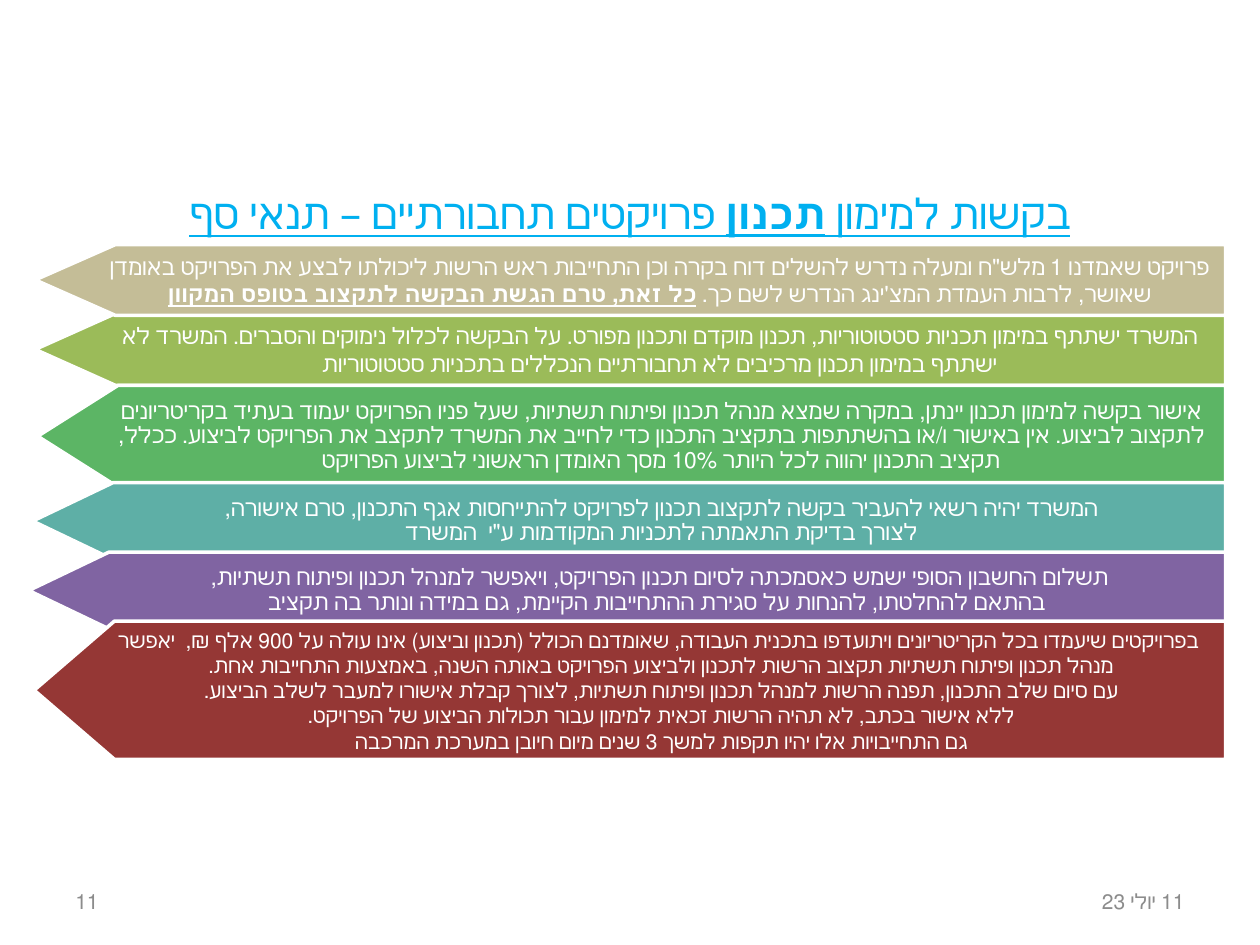
import pptx
import pptx.util
import pptx.dml.color
import pptx.enum.text

Cm = pptx.util.Cm
Pt = pptx.util.Pt
ALIGN = pptx.enum.text.PP_ALIGN
MIDDLE = pptx.enum.text.MSO_ANCHOR.MIDDLE
COLORS = {
    "title": "00B0F0", "footer": "8C8C8C", "white": "FFFFFF",
    "sand": "C4BD97", "olive": "9BBB59", "green": "5CB565",
    "teal": "5EAFA6", "purple": "8064A2", "red": "953735",
}


def color(key):
    return pptx.dml.color.RGBColor.from_string(COLORS[key])


def add_text(paragraph, runs, font, size, color_key, align, underline=None):
    paragraph.alignment = align
    paragraph._p.get_or_add_pPr().set("rtl", "1")
    for text, emphasis in runs:
        for index, line in enumerate(text.split("\n")):
            if index:
                paragraph.add_line_break()
            run = paragraph.add_run()
            run.text = line
            run.font.name = font
            run.font.size = Pt(size)
            run.font.bold = emphasis
            run.font.underline = underline or emphasis
            run.font.color.rgb = color(color_key)
            run._r.get_or_add_rPr().set("lang", "he-IL")


deck = pptx.Presentation()
deck.slide_width = Cm(25.4)
deck.slide_height = Cm(19.05)
slide = deck.slides.add_slide(deck.slide_layouts[5])

title = slide.shapes.title
title.left, title.top, title.width, title.height = Cm(1.27), Cm(3.48), Cm(22.86), Cm(1.6)
title.text_frame.vertical_anchor = MIDDLE
title_runs = [("בקשות למימון ", False), ("תכנון", True), (" פרויקטים תחבורתיים – תנאי סף", False)]
add_text(title.text_frame.paragraphs[0], title_runs, "Montserrat", 24, "title", ALIGN.CENTER, True)

for left, text, align in [(18.21, "11 יולי 23", ALIGN.RIGHT), (1.27, "11", ALIGN.LEFT)]:
    footer = slide.shapes.add_textbox(Cm(left), Cm(17.65), Cm(5.92), Cm(1.02)).text_frame
    footer.word_wrap = True
    footer.vertical_anchor = MIDDLE
    add_text(footer.paragraphs[0], [(text, False)], "Calibri", 12, "footer", align)

conditions = [
    ("olive", 0.71, 6.32, 1.45, 13, None, [[
        ("המשרד ישתתף במימון תכניות סטטוטוריות, תכנון מוקדם ותכנון מפורט. על הבקשה לכלול נימוקים והסברים. "
         "המשרד לא ישתתף במימון תכנון מרכיבים לא תחבורתיים הנכללים בתכניות סטטוטוריות", False)]]),
    ("green", 0.76, 7.77, 2.05, 13, 0.9, [[
        ("אישור בקשה למימון תכנון יינתן, במקרה שמצא מנהל תכנון ופיתוח תשתיות, שעל פניו הפרויקט יעמוד בעתיד "
         "בקריטריונים לתקצוב לביצוע. אין באישור ו/או בהשתתפות בתקציב התכנון כדי לחייב את המשרד לתקצב את "
         "הפרויקט לביצוע. ככלל, תקציב התכנון יהווה לכל היותר 10% מסך האומדן הראשוני לביצוע הפרויקט", False)]]),
    ("teal", 0.66, 9.73, 1.55, 13, 0.9, [[
        ("המשרד יהיה רשאי להעביר בקשה לתקצוב תכנון לפרויקט להתייחסות אגף התכנון, טרם אישורה, \n"
         "לצורך בדיקת התאמתה לתכניות המקודמות ע\"י  המשרד ", False)]]),
    ("purple", 0.58, 11.13, 1.55, 13, 0.9, [[
        ("תשלום החשבון הסופי ישמש כאסמכתה לסיום תכנון הפרויקט, ויאפשר למנהל תכנון ופיתוח תשתיות, \n"
         "בהתאם להחלטתו, להנחות על סגירת ההתחייבות הקיימת, גם במידה ונותר בה תקציב", False)]]),
    ("red", 0.69, 12.52, 2.79, 12, None, [
        [("בפרויקטים שיעמדו בכל הקריטריונים ויתועדפו בתכנית העבודה, שאומדנם הכולל (תכנון וביצוע) אינו עולה "
          "על 900 אלף ₪,  יאפשר מנהל תכנון ופיתוח תשתיות תקצוב הרשות לתכנון ולביצוע הפרויקט באותה השנה, "
          "באמצעות התחייבות אחת. ", False)],
        [("עם סיום שלב התכנון, תפנה הרשות למנהל תכנון ופיתוח תשתיות, לצורך קבלת אישורו למעבר לשלב הביצוע. \n"
          "ללא אישור בכתב, לא תהיה הרשות זכאית למימון עבור תכולות הביצוע של הפרויקט. \n"
          "גם התחייבויות אלו יהיו תקפות למשך 3 שנים מיום חיובן במערכת המרכבה ", False)]]),
    ("sand", 0.71, 4.93, 1.43, 13, None, [[
        ("פרויקט שאמדנו 1 מלש\"ח ומעלה נדרש להשלים דוח בקרה וכן התחייבות ראש הרשות ליכולתו לבצע את "
         "הפרויקט באומדן שאושר, לרבות העמדת המצ'ינג הנדרש לשם כך. ", False),
        ("כל זאת, טרם הגשת הבקשה לתקצוב בטופס המקוון", True)]]),
]
right, point_depth = 24.71, 1.62

for fill, tip, top, height, size, spacing, paragraphs in conditions:
    shoulder, bottom = tip + point_depth, top + height
    outline = slide.shapes.build_freeform(Cm(right), Cm(bottom))
    corners = [(shoulder, bottom), (tip, top + height / 2), (shoulder, top), (right, top)]
    outline.add_line_segments([(Cm(x), Cm(y)) for x, y in corners], close=True)
    arrow = outline.convert_to_shape()
    arrow.shadow.inherit = False
    arrow.fill.solid()
    arrow.fill.fore_color.rgb = color(fill)
    arrow.line.color.rgb = color("white")
    arrow.line.width = Pt(2)
    frame = arrow.text_frame
    frame.word_wrap = True
    frame.vertical_anchor = MIDDLE
    frame.margin_left, frame.margin_right = Cm(1.42), Cm(0.25)
    frame.margin_top = frame.margin_bottom = Cm(0.13)
    for index, runs in enumerate(paragraphs):
        paragraph = frame.add_paragraph() if index else frame.paragraphs[0]
        paragraph.line_spacing = spacing
        add_text(paragraph, runs, "Lato", size, "white", ALIGN.CENTER)

deck.save("out.pptx")
